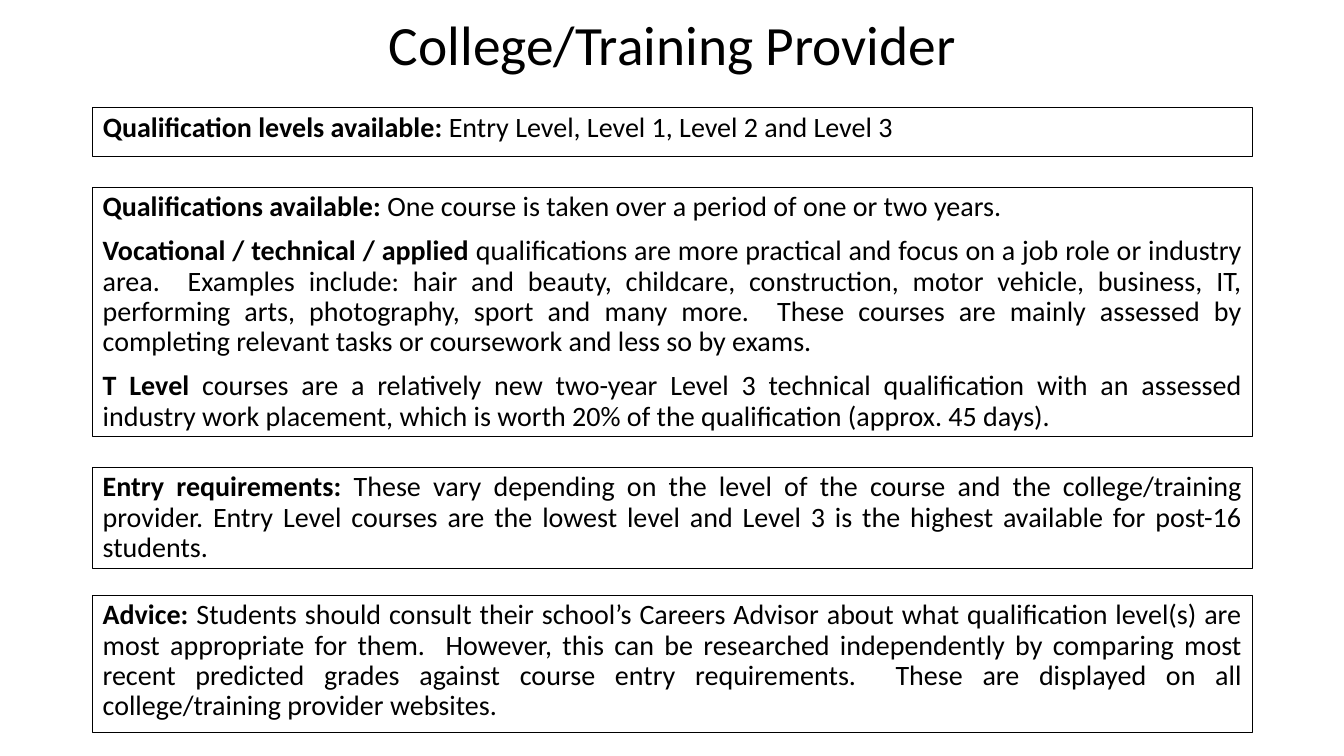
import dataclasses

import pptx
import pptx.dml.color
import pptx.enum.text
import pptx.oxml
import pptx.util

ALIGN = pptx.enum.text.PP_ALIGN
ANCHOR = pptx.enum.text.MSO_ANCHOR


@dataclasses.dataclass(frozen=True)
class Theme:
    """Hold the colours, type and spacing of the deck."""
    ink: str = "000000"
    font: str = "Calibri"
    title_size: float = 39.6
    body_size: float = 20
    line_width: float = 0.75
    line_spacing: float = 0.9
    space_before: float = 10


THEME = Theme()
WIDTH, HEIGHT = pptx.util.Inches(13.33), pptx.util.Inches(7.5)
LEFT, SPAN = 6.9, 86.27
TITLE_ROW = (0.9, 10.8)
LEVELS_ROW = (14.27, 6.4)
LEVELS = [("Qualification levels available:", " Entry Level, Level 1, Level 2 and Level 3")]
PANELS = [
    ((24.8, 32.93), [
        ("Qualifications available: ",
         "One course is taken over a period of one or two years."),
        ("Vocational / technical / applied ",
         "qualifications are more practical and focus on a job role or industry area.  "
         "Examples include: hair and beauty, childcare, construction, motor vehicle, "
         "business, IT, performing arts, photography, sport and many more.  These courses "
         "are mainly assessed by completing relevant tasks or coursework and less so by exams."),
        ("T Level ",
         "courses are a relatively new two-year Level 3 technical qualification with an "
         "assessed industry work placement, which is worth 20% of the qualification "
         "(approx. 45 days)."),
    ]),
    ((61.87, 13.33), [
        ("Entry requirements:",
         " These vary depending on the level of the course and the college/training "
         "provider. Entry Level courses are the lowest level and Level 3 is the highest "
         "available for post-16 students."),
    ]),
    ((78.8, 18.13), [
        ("Advice: ",
         "Students should consult their school’s Careers Advisor about what qualification "
         "level(s) are most appropriate for them.  However, this can be researched "
         "independently by comparing most recent predicted grades against course entry "
         "requirements.  These are displayed on all college/training provider websites."),
    ]),
]


def row_box(row):
    """Turn a top and height in percent into a box across the content column."""
    top, height = row
    return (int(WIDTH * LEFT / 100), int(HEIGHT * top / 100),
            int(WIDTH * SPAN / 100), int(HEIGHT * height / 100))


def place(shape, box):
    """Move a shape into the given box."""
    shape.left, shape.top, shape.width, shape.height = box


def add_span(para, text, size, bold=False):
    """Add one formatted run to a paragraph."""
    span = para.add_run()
    span.text = text
    span.font.name, span.font.size, span.font.bold = THEME.font, pptx.util.Pt(size), bold
    span.font.color.rgb = pptx.dml.color.RGBColor.from_string(THEME.ink)


def fill_title(title, box, text):
    """Set the centred slide title."""
    place(title, box)
    frame = title.text_frame
    frame.auto_size = pptx.enum.text.MSO_AUTO_SIZE.NONE
    frame.vertical_anchor = ANCHOR.MIDDLE
    para = frame.paragraphs[0]
    para.alignment, para.line_spacing = ALIGN.CENTER, THEME.line_spacing
    add_span(para, text, THEME.title_size)


def fill_panel(panel, box, entries, alignment):
    """Outline a panel and write its paragraphs, each opening with a bold lead."""
    place(panel, box)
    panel.line.color.rgb = pptx.dml.color.RGBColor.from_string(THEME.ink)
    panel.line.width = pptx.util.Pt(THEME.line_width)
    frame = panel.text_frame
    frame.word_wrap = True
    frame.auto_size = pptx.enum.text.MSO_AUTO_SIZE.NONE
    frame.vertical_anchor = ANCHOR.TOP
    for index, (lead, detail) in enumerate(entries):
        para = frame.add_paragraph() if index else frame.paragraphs[0]
        para.alignment, para.line_spacing = alignment, THEME.line_spacing
        para.space_before = pptx.util.Pt(THEME.space_before)
        properties = para._p.get_or_add_pPr()
        properties.set("marL", "0")
        properties.set("indent", "0")
        properties.append(pptx.oxml.parse_xml(
            '<a:buNone xmlns:a="http://schemas.openxmlformats.org/drawingml/2006/main"/>'))
        add_span(para, lead, THEME.body_size, bold=True)
        add_span(para, detail, THEME.body_size)


def build_provider_page(deck):
    """Add the page about colleges and training providers."""
    page = deck.slides.add_slide(deck.slide_layouts[1])
    fill_title(page.shapes.title, row_box(TITLE_ROW), "College/Training Provider")
    fill_panel(page.placeholders[1], row_box(LEVELS_ROW), LEVELS, ALIGN.LEFT)
    for row, entries in PANELS:
        box = row_box(row)
        fill_panel(page.shapes.add_textbox(*box), box, entries, ALIGN.JUSTIFY)


def main():
    """Build and save the deck."""
    deck = pptx.Presentation()
    deck.slide_width, deck.slide_height = WIDTH, HEIGHT
    build_provider_page(deck)
    deck.save("out.pptx")


if __name__ == "__main__":
    main()
